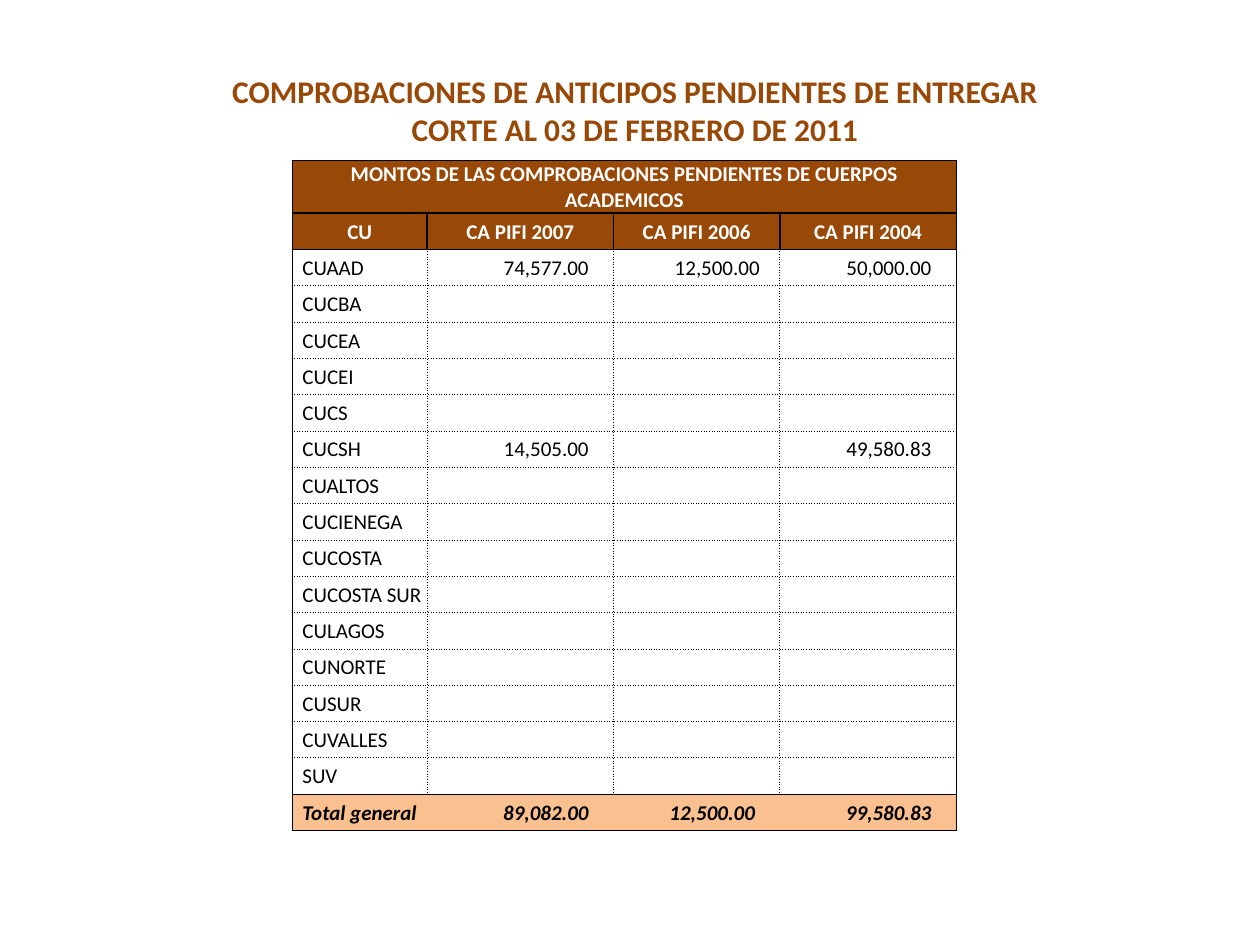
from dataclasses import dataclass
from typing import NamedTuple

from lxml import etree
from pptx import Presentation, util as u
from pptx.dml.color import RGBColor
from pptx.enum import text as t
from pptx.oxml import ns


@dataclass(frozen=True)
class Theme:
    font: str = "Calibri"
    brown: str = "984807"
    peach: str = "FAC090"
    white: str = "FFFFFF"
    black: str = "000000"
    title: float = 18
    body: float = 12


class Look(NamedTuple):
    fill: str
    ink: str
    bold: bool = False
    slant: bool = False


class Line(NamedTuple):
    width: float
    dash: str = "solid"


class Box(NamedTuple):
    left: float
    top: float
    width: float
    height: float


THEME = Theme()
WIDE, HIGH = u.Inches(10), u.Inches(7.5)
TITLE = Box(0.164, 0.07, 0.68, 0.095)
TABLE = Box(0.232, 0.17, 0.527, 0.708)
COLS = (1.07, 1.48, 1.32, 1.4)
TOP_ROW = u.Inches(0.41)

HEAD = Look(THEME.brown, THEME.white, bold=True)
BODY = Look(THEME.white, THEME.black)
TOTAL = Look(THEME.peach, THEME.black, bold=True, slant=True)

THICK, THIN, DOTS, NONE = Line(1), Line(0.5), Line(0.5, "sysDot"), Line(0)

HEADING = (
    "COMPROBACIONES DE ANTICIPOS PENDIENTES DE ENTREGAR",
    "CORTE AL 03 DE FEBRERO DE 2011",
)
BANNER = "MONTOS DE LAS COMPROBACIONES PENDIENTES DE CUERPOS ACADEMICOS"
LABELS = ("CU", "CA PIFI 2007", "CA PIFI 2006", "CA PIFI 2004")
CAMPUS = (
    "CUAAD", "CUCBA", "CUCEA", "CUCEI", "CUCS", "CUCSH", "CUALTOS", "CUCIENEGA",
    "CUCOSTA", "CUCOSTA SUR", "CULAGOS", "CUNORTE", "CUSUR", "CUVALLES", "SUV",
)
SUMS = {
    "CUAAD": ("74,577.00 ", "12,500.00", "50,000.00 "),
    "CUCSH": ("14,505.00 ", "", "49,580.83 "),
}
TOTALS = ("Total general", "89,082.00 ", "12,500.00 ", "99,580.83 ")
ROWS = [
    (BANNER, "", "", ""),
    LABELS,
    *((name, *SUMS.get(name, ("", "", ""))) for name in CAMPUS),
    TOTALS,
]
LAST_ROW, LAST_COL = len(ROWS) - 1, len(COLS) - 1


def place(box: Box) -> tuple[int, int, int, int]:
    return (int(WIDE * box.left), int(HIGH * box.top),
            int(WIDE * box.width), int(HIGH * box.height))


def style(para, size: float, ink: str, bold: bool, slant: bool, align) -> None:
    para.alignment = align
    font = para.font
    font.name, font.size = THEME.font, u.Pt(size)
    font.bold, font.italic = bold, slant
    font.color.rgb = RGBColor.from_string(ink)


def edges(row: int, col: int) -> dict[str, Line]:
    if row < 2:
        return dict.fromkeys("LRTB", THICK)
    total = row == LAST_ROW
    inner = NONE if total else DOTS
    return {
        "L": THICK if col == 0 else inner,
        "R": THICK if col == LAST_COL else inner,
        "T": THIN if total else THICK if row == 2 else DOTS,
        "B": THICK if total else THIN if row == LAST_ROW - 1 else DOTS,
    }


def rule(cell, side: str, line: Line) -> None:
    props = cell._tc.get_or_add_tcPr()
    edge = etree.SubElement(props, ns.qn(f"a:ln{side}"), w=str(u.Pt(line.width)))
    if line is NONE:
        etree.SubElement(edge, ns.qn("a:noFill"))
        return
    paint = etree.SubElement(edge, ns.qn("a:solidFill"))
    etree.SubElement(paint, ns.qn("a:srgbClr"), val=THEME.black)
    etree.SubElement(edge, ns.qn("a:prstDash"), val=line.dash)


def draw_cell(cell, row: int, col: int, words: str) -> None:
    look = HEAD if row < 2 else TOTAL if row == LAST_ROW else BODY
    if row < 2:
        left, right, align = 0.01, 0.01, t.PP_ALIGN.CENTER
    elif col == 0:
        left, right, align = 0.08, 0 if look is TOTAL else 0.04, t.PP_ALIGN.LEFT
    else:
        left, right, align = 0, 0.16, t.PP_ALIGN.RIGHT
    cell.margin_left, cell.margin_right = u.Inches(left), u.Inches(right)
    cell.margin_top, cell.margin_bottom = u.Inches(0.01), 0
    cell.vertical_anchor = t.MSO_ANCHOR.MIDDLE
    for side, line in edges(row, col).items():
        rule(cell, side, line)
    cell.fill.solid()
    cell.fill.fore_color.rgb = RGBColor.from_string(look.fill)
    para = cell.text_frame.paragraphs[0]
    style(para, THEME.body, look.ink, look.bold, look.slant, align)
    if words:
        para.add_run().text = words
    else:
        etree.SubElement(para._p, ns.qn("a:endParaRPr"), sz=str(int(THEME.body * 100)))


def draw_table(slide) -> None:
    frame = slide.shapes.add_table(len(ROWS), len(COLS), *place(TABLE))
    table = frame.table
    table.first_row = table.horz_banding = False
    for col, width in zip(table.columns, COLS):
        col.width = u.Inches(width)
    pitch = (int(HIGH * TABLE.height) - TOP_ROW) // LAST_ROW
    for i, row in enumerate(table.rows):
        row.height = pitch if i else TOP_ROW
    for i, row in enumerate(ROWS):
        for j, words in enumerate(row):
            draw_cell(table.cell(i, j), i, j, words)
    table.cell(0, 0).merge(table.cell(0, LAST_COL))


def draw_title(slide) -> None:
    frame = slide.shapes.add_textbox(*place(TITLE)).text_frame
    frame.word_wrap = False
    frame.auto_size = t.MSO_AUTO_SIZE.SHAPE_TO_FIT_TEXT
    frame.text = "\n".join(HEADING)
    for para in frame.paragraphs:
        style(para, THEME.title, THEME.brown, True, False, t.PP_ALIGN.CENTER)


def main() -> None:
    deck = Presentation()
    deck.slide_width, deck.slide_height = WIDE, HIGH
    slide = deck.slides.add_slide(deck.slide_layouts[6])
    draw_table(slide)
    draw_title(slide)
    deck.save("out.pptx")


if __name__ == "__main__":
    main()
